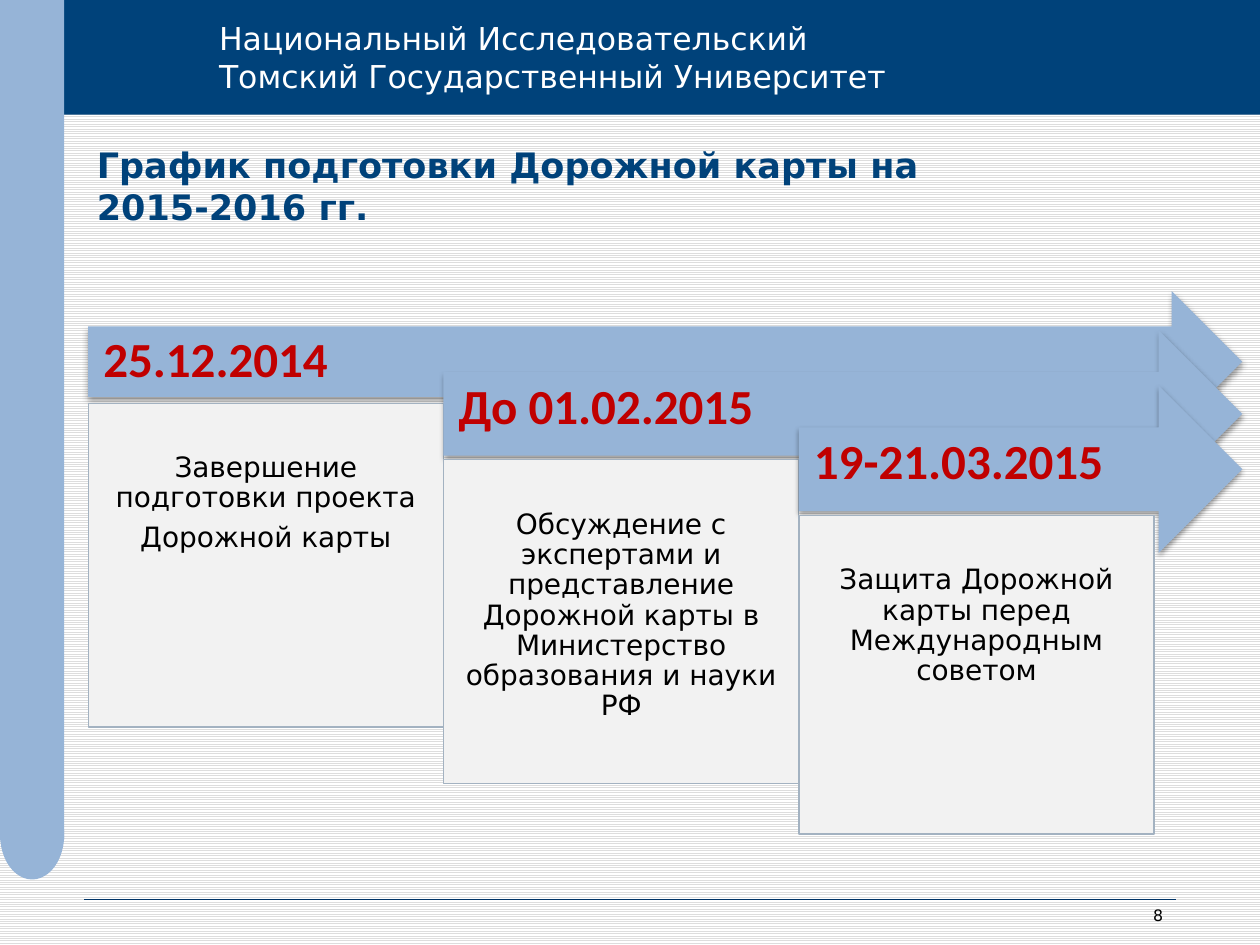
from dataclasses import dataclass

from lxml.etree import SubElement
from pptx import Presentation
from pptx.dml.color import RGBColor
from pptx.enum.dml import MSO_PATTERN
from pptx.enum.shapes import MSO_CONNECTOR, MSO_SHAPE
from pptx.enum.text import MSO_ANCHOR, PP_ALIGN
from pptx.oxml.ns import qn
from pptx.shapes.autoshape import Shape
from pptx.slide import Slide
from pptx.util import Inches, Pt

NAVY = RGBColor(0x00, 0x42, 0x7A)
SKY = RGBColor(0x96, 0xB4, 0xD7)
RED = RGBColor(0xC0, 0x00, 0x00)
BLACK = RGBColor(0x00, 0x00, 0x00)
WHITE = RGBColor(0xFF, 0xFF, 0xFF)
STRIPE_GREY = RGBColor(0xDD, 0xDD, 0xDD)
CARD_GREY = RGBColor(0xF2, 0xF2, 0xF2)
CARD_EDGE = RGBColor(0xA3, 0xB2, 0xC1)
FOOTER_BLUE = RGBColor(0x00, 0x33, 0x66)

TIMELINE_LEFT, TIMELINE_RIGHT = 0.7, 9.86
CARD_WIDTH = 2.82


@dataclass(frozen=True)
class TextStyle:
    size: float
    color: RGBColor
    font: str = "DejaVu Sans"
    bold: bool = False
    align: PP_ALIGN = PP_ALIGN.LEFT
    line_spacing: float = 1.0
    space_after: float = 0


@dataclass(frozen=True)
class Stage:
    date: str
    details: list[str]
    arrow_top: float
    arrow_height: float
    date_bottom_inset: float
    card_top: float
    card_height: float


HEADER = TextStyle(18, WHITE)
TITLE = TextStyle(20, NAVY, bold=True, align=PP_ALIGN.JUSTIFY)
PAGE_NUMBER = TextStyle(9, BLACK, align=PP_ALIGN.RIGHT)
DATE = TextStyle(28, RED, font="Calibri", bold=True, line_spacing=0.9)
DETAIL = TextStyle(16, BLACK, align=PP_ALIGN.CENTER, line_spacing=0.9, space_after=5.6)

STAGES = [
    Stage("25.12.2014", ["Завершение подготовки проекта", "Дорожной карты"],
          2.31, 1.12, 0.12, 3.2, 2.57),
    Stage("До 01.02.2015",
          ["Обсуждение с экспертами и представление Дорожной карты в "
           "Министерство образования и науки РФ"],
          2.62, 1.33, 0.21, 3.65, 2.57),
    Stage("19-21.03.2015", ["Защита Дорожной карты перед Международным советом"],
          3.06, 1.33, 0.21, 4.09, 2.53),
]


def write(shape: Shape, lines: list[str], style: TextStyle) -> None:
    frame = shape.text_frame
    frame.word_wrap = True
    frame.text = "\n".join(lines)
    for paragraph in frame.paragraphs:
        paragraph.alignment = style.align
        paragraph.line_spacing = style.line_spacing
        paragraph.space_after = Pt(style.space_after)
        paragraph.font.name = style.font
        paragraph.font.size = Pt(style.size)
        paragraph.font.bold = style.bold
        paragraph.font.color.rgb = style.color


def set_insets(shape: Shape, left: float, top: float, right: float, bottom: float) -> None:
    frame = shape.text_frame
    frame.margin_left, frame.margin_top = Inches(left), Inches(top)
    frame.margin_right, frame.margin_bottom = Inches(right), Inches(bottom)


def add_text(slide: Slide, left: float, top: float, width: float, height: float,
             lines: list[str], style: TextStyle) -> None:
    box = slide.shapes.add_textbox(Inches(left), Inches(top), Inches(width), Inches(height))
    write(box, lines, style)


def add_block(slide: Slide, kind: MSO_SHAPE, left: float, top: float,
              width: float, height: float, color: RGBColor) -> Shape:
    """Add a flat filled shape without outline or shadow."""
    block = slide.shapes.add_shape(kind, Inches(left), Inches(top), Inches(width), Inches(height))
    block.shadow.inherit = False
    block.fill.solid()
    block.fill.fore_color.rgb = color
    block.line.fill.background()
    return block


def drop_shadow(shape: Shape) -> None:
    effects = shape.element.spPr.find(qn("a:effectLst"))
    shadow = SubElement(effects, qn("a:outerShdw"), blurRad=str(Pt(3.1)), dist=str(Pt(1.6)),
                        dir="5400000", rotWithShape="0")
    color = SubElement(shadow, qn("a:srgbClr"), val=str(BLACK))
    SubElement(color, qn("a:alpha"), val="38000")


def add_stage(slide: Slide, stage: Stage, left: float) -> None:
    arrow = add_block(slide, MSO_SHAPE.RIGHT_ARROW, left, stage.arrow_top,
                      TIMELINE_RIGHT - left, stage.arrow_height, SKY)
    drop_shadow(arrow)
    write(arrow, [stage.date], DATE)
    set_insets(arrow, 0.12, 0.12, 0.28, stage.date_bottom_inset)
    arrow.text_frame.vertical_anchor = MSO_ANCHOR.MIDDLE

    card = add_block(slide, MSO_SHAPE.RECTANGLE, left, stage.card_top,
                     CARD_WIDTH, stage.card_height, CARD_GREY)
    card.line.color.rgb = CARD_EDGE
    card.line.width = Pt(0.75)
    write(card, stage.details, DETAIL)
    set_insets(card, 0.07, 0.4, 0.07, 0.07)
    card.text_frame.vertical_anchor = MSO_ANCHOR.TOP


def add_frame(slide: Slide) -> None:
    """Draw the striped background, header, side bar and footer."""
    background = slide.background.fill
    background.patterned()
    background.pattern = MSO_PATTERN.LIGHT_HORIZONTAL
    background.fore_color.rgb = STRIPE_GREY
    background.back_color.rgb = WHITE

    rule = slide.shapes.add_connector(MSO_CONNECTOR.STRAIGHT, Inches(0.67), Inches(7.14),
                                      Inches(9.33), Inches(7.14))
    rule.line.color.rgb = FOOTER_BLUE
    rule.line.width = Pt(0.25)
    SubElement(rule.element.spPr, qn("a:effectLst"))

    add_block(slide, MSO_SHAPE.RECTANGLE, 0, 0, 10, 0.91, NAVY)
    add_block(slide, MSO_SHAPE.OVAL, 0, 6.27, 0.51, 0.71, SKY)
    add_block(slide, MSO_SHAPE.RECTANGLE, 0, 0, 0.51, 6.66, SKY)
    add_text(slide, 1.64, 0.1, 5.91, 0.71,
             ["Национальный Исследовательский", "Томский Государственный Университет"], HEADER)
    add_text(slide, 8.23, 7.14, 1.1, 0.25, ["8"], PAGE_NUMBER)


def main() -> None:
    deck = Presentation()
    deck.slide_width, deck.slide_height = Inches(10), Inches(7.5)
    slide = deck.slides.add_slide(deck.slide_layouts[6])
    add_frame(slide)
    add_text(slide, 0.67, 1.09, 8.82, 0.77,
             ["График подготовки Дорожной карты на", "2015-2016 гг."], TITLE)
    for index, stage in enumerate(STAGES):
        add_stage(slide, stage, TIMELINE_LEFT + index * CARD_WIDTH)
    deck.save("out.pptx")


if __name__ == "__main__":
    main()
